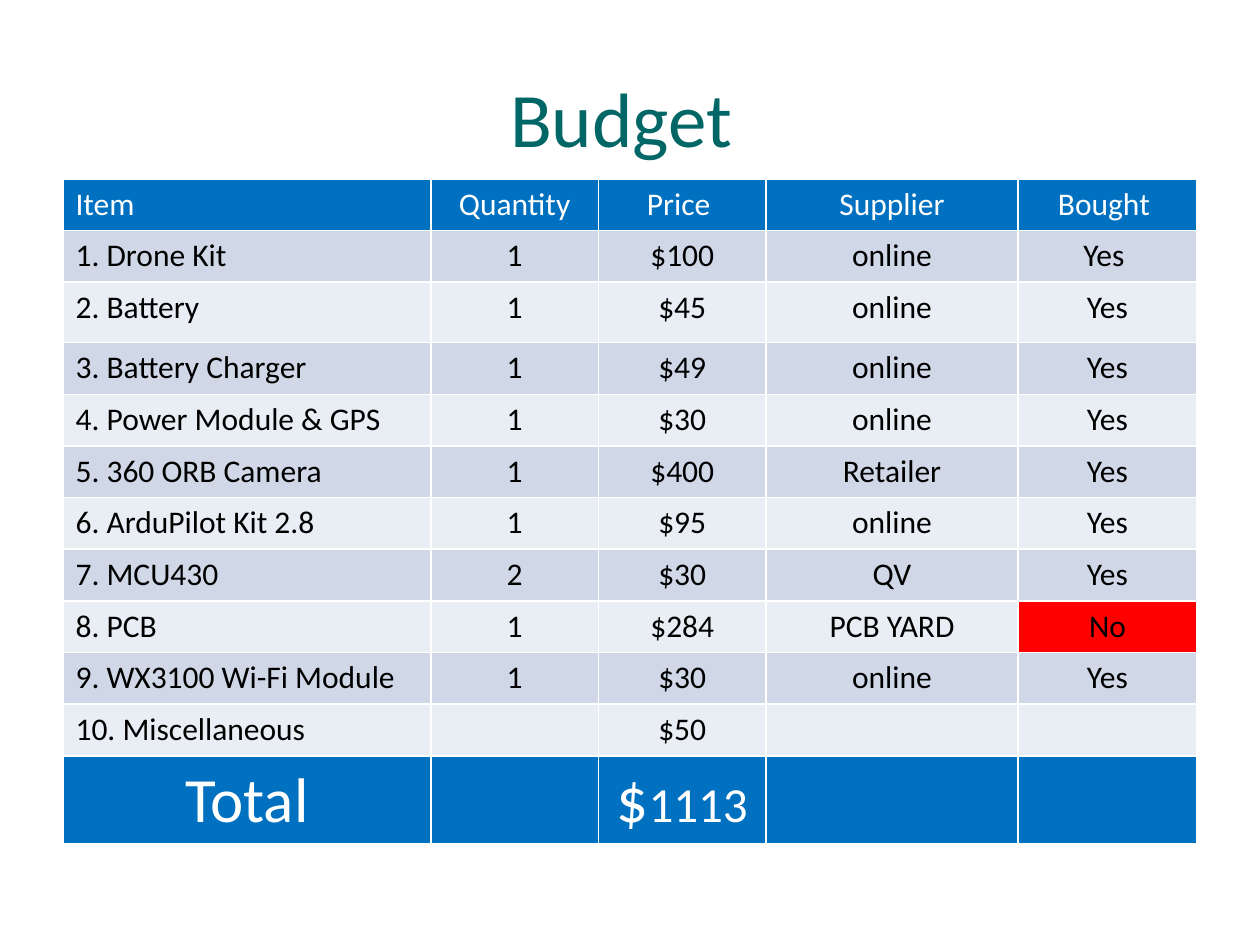
from typing import NamedTuple

from lxml import etree
from pptx import Presentation
from pptx import util as u
from pptx.dml.color import RGBColor
from pptx.enum import text
from pptx.oxml import ns

FONT = "Calibri"
TEAL = RGBColor(0x00, 0x66, 0x66)
BLUE = RGBColor(0x00, 0x70, 0xC0)
DARK = RGBColor(0xD0, 0xD8, 0xE8)
LIGHT = RGBColor(0xE9, 0xED, 0xF4)
RED = RGBColor(0xFF, 0x00, 0x00)
WHITE = RGBColor(0xFF, 0xFF, 0xFF)
BLACK = RGBColor(0x00, 0x00, 0x00)

WIDTHS = (2.92, 1.33, 1.33, 2, 1.42)
ROW, TALL, LAST = 0.41, 0.48, 0.7
HEAD = ("Item", "Quantity", "Price ", "Supplier", "Bought ")


class Part(NamedTuple):
    name: str
    count: str
    price: str
    seller: str
    bought: str


PARTS = (
    Part("Drone Kit", "1", "$100", "online", "Yes "),
    Part("Battery", "1", "$45", "online", "Yes"),
    Part("Battery Charger", "1", "$49", "online", "Yes"),
    Part("Power Module & GPS", "1", "$30", "online", "Yes"),
    Part("360 ORB Camera", "1", "$400", "Retailer", "Yes"),
    Part("ArduPilot Kit 2.8", "1", "$95", "online", "Yes"),
    Part("MCU430", "2", "$30", "QV", "Yes"),
    Part("PCB", "1", "$284", "PCB YARD", "No"),
    Part("WX3100 Wi-Fi Module", "1", "$30", "online", "Yes"),
    Part("Miscellaneous", "", "$50", "", ""),
)


def style(run, size: float, ink: RGBColor) -> None:
    run.font.name = FONT
    run.font.size = u.Pt(size)
    run.font.color.rgb = ink


def edge(cell) -> None:
    props = cell._tc.get_or_add_tcPr()
    for i, side in enumerate(("lnL", "lnR", "lnT", "lnB")):
        line = etree.Element(ns.qn(f"a:{side}"), w=str(u.Pt(1)))
        fill = etree.SubElement(line, ns.qn("a:solidFill"))
        etree.SubElement(fill, ns.qn("a:srgbClr"), val=str(WHITE))
        props.insert(i, line)


def put(cell, words: str, fill: RGBColor, ink: RGBColor, mid: bool) -> None:
    cell.fill.solid()
    cell.fill.fore_color.rgb = fill
    edge(cell)
    if not words:
        return
    cell.text_frame.text = words
    para = cell.text_frame.paragraphs[0]
    para.alignment = text.PP_ALIGN.CENTER if mid else text.PP_ALIGN.LEFT
    style(para.runs[0], 18, ink)


def title(slide) -> None:
    box = slide.shapes.add_textbox(u.Inches(0.5), u.Inches(0.3), u.Inches(9), u.Inches(1.25))
    frame = box.text_frame
    frame.word_wrap = True
    frame.vertical_anchor = text.MSO_ANCHOR.MIDDLE
    frame.text = "Budget "
    frame.paragraphs[0].alignment = text.PP_ALIGN.CENTER
    style(frame.paragraphs[0].runs[0], 44, TEAL)


def total(table, row: int) -> None:
    for col in range(len(WIDTHS)):
        put(table.cell(row, col), {0: "Total", 2: "$"}.get(col, ""), BLUE, WHITE, True)
    for col in (0, 2):
        style(table.cell(row, col).text_frame.paragraphs[0].runs[0], 36, WHITE)
    run = table.cell(row, 2).text_frame.paragraphs[0].add_run()
    run.text = "1113"
    style(run, 28, WHITE)


def budget(slide) -> None:
    highs = [ROW] * (len(PARTS) + 1) + [LAST]
    highs[2] = TALL
    table = slide.shapes.add_table(
        len(highs), len(WIDTHS), u.Inches(0.5), u.Inches(1.42), u.Inches(9), u.Inches(sum(highs))
    ).table
    table.first_row = table.horz_banding = False
    for col, wide in zip(table.columns, WIDTHS):
        col.width = u.Inches(wide)
    for row, high in zip(table.rows, highs):
        row.height = u.Inches(high)
    for col, words in enumerate(HEAD):
        put(table.cell(0, col), words, BLUE, WHITE, col > 0)
    for row, part in enumerate(PARTS, 1):
        band = DARK if row % 2 else LIGHT
        for col, words in enumerate(part._replace(name=f"{row}. {part.name}")):
            fill = RED if words == "No" else band
            put(table.cell(row, col), words, fill, BLACK, col > 0)
    total(table, len(highs) - 1)


def main() -> None:
    deck = Presentation()
    deck.slide_width = u.Inches(10)
    deck.slide_height = u.Inches(7.5)
    slide = deck.slides.add_slide(deck.slide_layouts[6])
    title(slide)
    budget(slide)
    deck.save("out.pptx")


if __name__ == "__main__":
    main()
